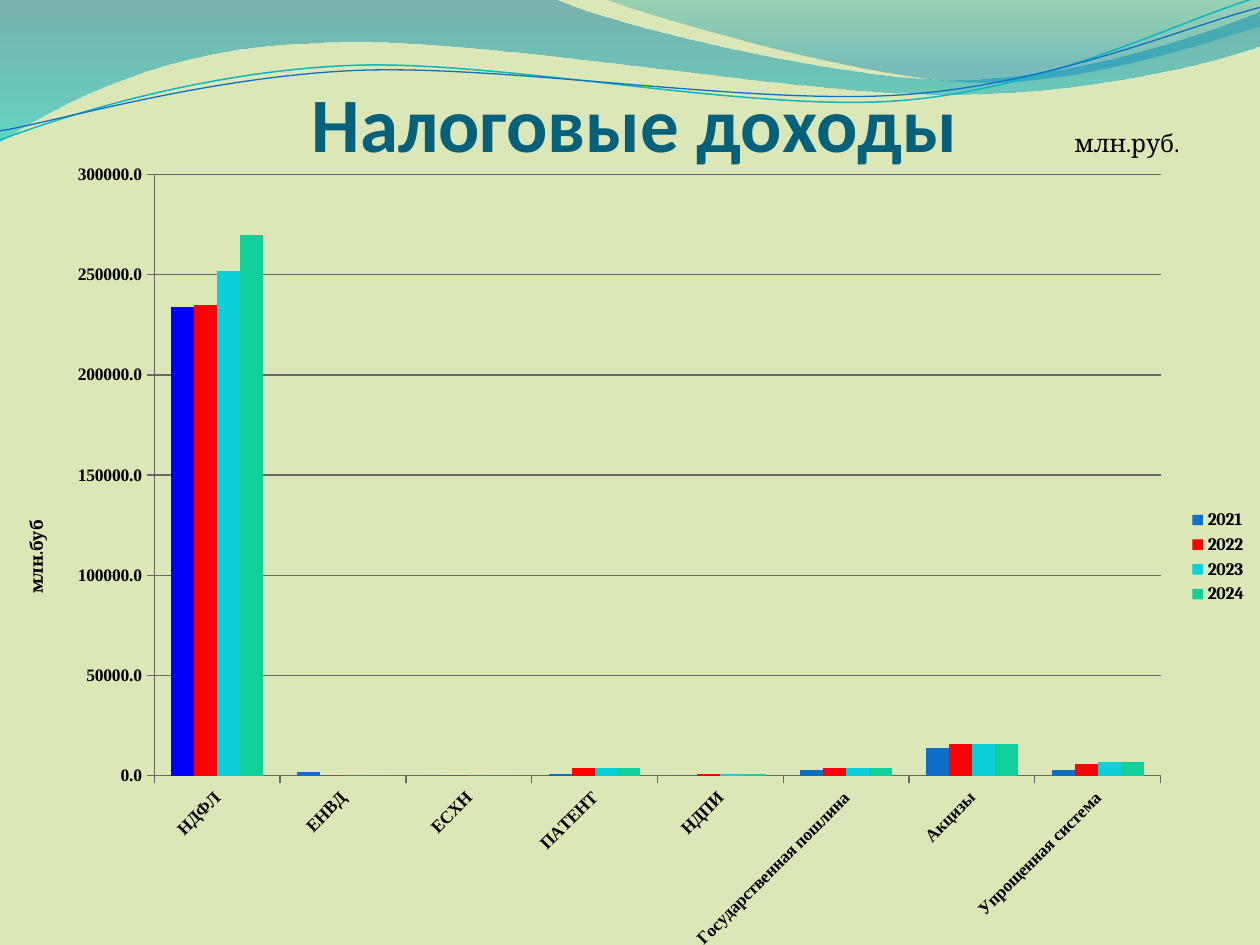
import math

import pptx
import pptx.chart.data
import pptx.dml.color
import pptx.enum.chart
import pptx.enum.text
import pptx.oxml
import pptx.oxml.ns
import pptx.util
from pptx.util import Cm

THEME = {
    "background": "DBE7B6", "title": "04617B", "text": "000000", "grid": "666666",
    "first_bar": "0000FF", "series": ["0F6FC6", "FF0000", "0BD0D9", "10CF9B"],
    "title_size": 44, "unit_size": 14, "chart_size": 10,
    "title_font": "Calibri", "body_font": "Cambria", "axis_font": "Times New Roman",
}

CATEGORIES = ["НДФЛ", "ЕНВД", "ЕСХН", "ПАТЕНТ", "НДПИ",
              "Государственная пошлина", "Акцизы", "Упрощенная система"]
SERIES = {
    "2021": [234000, 2000, 0, 1000, 0, 3000, 14000, 3000],
    "2022": [235000, 0, 0, 4000, 1000, 4000, 16000, 6000],
    "2023": [252000, 0, 0, 4000, 1000, 4000, 16000, 7000],
    "2024": [270000, 0, 0, 4000, 1000, 4000, 16000, 7000],
}

# Outlines in centimetres: two numbers make a line, six a Bezier curve.
# Gradient stops are (position, colour, opacity in percent).
WAVES = [
    {"outline": [(0, 0), (11.18, -0.03), (12.09, 0.43, 16.87, 1.6, 19.25, 1.6),
                 (21.67, 1.6, 24.33, 0.66, 25.4, 0.23), (25.43, 0.91),
                 (24.97, 1.12, 22.1, 1.93, 18.95, 1.9),
                 (15.8, 1.9, 9.7, 0.71, 6.53, 0.86),
                 (3.28, 0.91, 1.17, 2.11, -0.03, 2.87), (0, 0)],
     "stops": [(0, "0074A1", 45), (1, "00C6CF", 55)]},
    {"outline": [(12.17, -0.03), (12.93, 0.28, 17.32, 1.57, 19.53, 1.65),
                 (21.74, 1.75, 24.41, 0.81, 25.4, 0.53), (25.4, 0), (12.17, -0.03)],
     "stops": [(0, "00A1A9", 30), (0.8, "008BBF", 45)]},
    {"outline": [(0, 2.82), (1.22, 2.36, 4.01, 1.45, 7.04, 1.32),
                 (10.03, 1.19, 15.06, 2.26, 18.11, 2.03),
                 (21.16, 1.8, 23.83, 0.38, 25.35, -0.05)],
     "line": ("0AB8BF", 0.85), "center": (12.67, 1.46)},
    {"outline": [(0, 2.64), (1.19, 2.44, 4.17, 1.55, 7.19, 1.42),
                 (10.24, 1.3, 15.16, 2.13, 18.21, 1.91),
                 (21.23, 1.7, 23.9, 0.53, 25.4, 0.15)],
     "line": ("0F6FC6", 0.75), "center": (12.69, 1.5)},
]
LINE_TILT = -2.7

ANCHOR = pptx.enum.text.MSO_ANCHOR
TEXTS = [
    {"text": "Налоговые доходы", "box": (1.27, 1.96, 23.06, 1.42),
     "frame": {"vertical_anchor": ANCHOR.BOTTOM, "margin_left": 0, "margin_right": 0,
               "margin_bottom": 0},
     "font": {"name": THEME["title_font"], "size": pptx.util.Pt(THEME["title_size"]),
              "bold": True},
     "color": THEME["title"]},
    {"text": "млн.руб.", "box": (21.03, 2.59, 3.38, 0.58),
     "frame": {"vertical_anchor": ANCHOR.MIDDLE},
     "font": {"name": THEME["body_font"], "size": pptx.util.Pt(THEME["unit_size"])},
     "color": THEME["text"]},
]
CHART_BOX = (0, 3, 25.4, 16.46)
PLOT_BOX = (3.11, 0.52, 20.29, 12.12)
AXIS_TITLE_CORNER = (0.44, 7.42)


def rgb(code):
    return pptx.dml.color.RGBColor.from_string(code)


def set_values(target, values):
    for name, value in values.items():
        setattr(target, name, value)


def level(point, center):
    """Undo the tilt of a line, which the shape's own rotation puts back."""
    angle = math.radians(-LINE_TILT)
    x, y = point[0] - center[0], point[1] - center[1]
    return (center[0] + x * math.cos(angle) - y * math.sin(angle),
            center[1] + x * math.sin(angle) + y * math.cos(angle))


def segment_points(wave):
    """Return each segment as a list of points, the last being its end."""
    segments = []
    for numbers in wave["outline"]:
        points = list(zip(numbers[::2], numbers[1::2]))
        if "center" in wave:
            points = [level(point, wave["center"]) for point in points]
        segments.append([(Cm(x), Cm(y)) for x, y in points])
    return segments


def draw_outline(slide, wave):
    """Build a freeform through the segment ends, then bend its curved segments."""
    segments = segment_points(wave)
    ends = [points[-1] for points in segments]
    builder = slide.shapes.build_freeform(*ends[0])
    builder.add_line_segments(ends[1:], close="stops" in wave)
    shape = builder.convert_to_shape()
    lines = shape._element.findall(".//" + pptx.oxml.ns.qn("a:lnTo"))
    for line, points in zip(lines, segments[1:]):
        if len(points) == 3:
            corners = "".join(f'<a:pt x="{x - shape.left}" y="{y - shape.top}"/>'
                              for x, y in points)
            line.getparent().replace(line, pptx.oxml.parse_xml(
                f'<a:cubicBezTo {pptx.oxml.ns.nsdecls("a")}>{corners}</a:cubicBezTo>'))
    return shape


def add_wave(slide, wave):
    shape = draw_outline(slide, wave)
    shape.shadow.inherit = False
    if "line" in wave:
        color, width = wave["line"]
        shape.rotation = LINE_TILT
        shape.fill.background()
        shape.line.color.rgb = rgb(color)
        shape.line.width = pptx.util.Pt(width)
        return
    shape.line.fill.background()
    shape.fill.gradient()
    shape.fill.gradient_angle = 270
    for stop, (position, color, _) in zip(shape.fill.gradient_stops, wave["stops"]):
        stop.position = position
        stop.color.rgb = rgb(color)
    colors = shape._element.spPr.findall(".//" + pptx.oxml.ns.qn("a:srgbClr"))
    for element, (_, _, opacity) in zip(colors, wave["stops"]):
        element.append(pptx.oxml.parse_xml(
            f'<a:alpha {pptx.oxml.ns.nsdecls("a")} val="{opacity * 1000}"/>'))


def add_text(slide, item):
    frame = slide.shapes.add_textbox(*map(Cm, item["box"])).text_frame
    set_values(frame, {"word_wrap": True, **item["frame"]})
    paragraph = frame.paragraphs[0]
    paragraph.alignment = pptx.enum.text.PP_ALIGN.CENTER
    run = paragraph.add_run()
    run.text = item["text"]
    set_values(run.font, item["font"])
    run.font.color.rgb = rgb(item["color"])


def set_layout(element, index, box):
    """Place a chart part by centimetres from the chart's corner."""
    for old in element.findall(pptx.oxml.ns.qn("c:layout")):
        element.remove(old)
    target = '<c:layoutTarget val="inner"/>' if len(box) == 4 else ""
    sizes = "".join(f'<c:{name} val="{length / full}"/>'
                    for name, length, full in zip("xywh", box, CHART_BOX[2:] * 2))
    element.insert(index, pptx.oxml.parse_xml(
        f'<c:layout {pptx.oxml.ns.nsdecls("c")}><c:manualLayout>{target}'
        f'<c:xMode val="edge"/><c:yMode val="edge"/>{sizes}</c:manualLayout></c:layout>'))


def add_tax_chart(slide):
    data = pptx.chart.data.CategoryChartData(number_format="0.0")
    data.categories = CATEGORIES
    for name, values in SERIES.items():
        data.add_series(name, values)
    chart = slide.shapes.add_chart(
        pptx.enum.chart.XL_CHART_TYPE.COLUMN_CLUSTERED, *map(Cm, CHART_BOX), data).chart
    body_font = {"name": THEME["body_font"], "size": pptx.util.Pt(THEME["chart_size"])}
    axis_font = {**body_font, "name": THEME["axis_font"], "bold": True}
    set_values(chart, {"has_title": False, "has_legend": True})
    set_values(chart.font, body_font)
    chart.font.color.rgb = rgb(THEME["text"])
    set_values(chart.legend, {"position": pptx.enum.chart.XL_LEGEND_POSITION.RIGHT,
                              "include_in_layout": False})
    set_values(chart.legend.font, {**body_font, "bold": True})

    plot = chart.plots[0]
    set_values(plot, {"gap_width": 150, "overlap": 0, "vary_by_categories": False})
    fills = [series.format.fill for series in plot.series]
    fills.append(plot.series[0].points[0].format.fill)
    for fill, color in zip(fills, [*THEME["series"], THEME["first_bar"]]):
        fill.solid()
        fill.fore_color.rgb = rgb(color)

    category_axis, value_axis = chart.category_axis, chart.value_axis
    set_values(value_axis, {"minimum_scale": 0, "maximum_scale": 300000,
                            "major_unit": 50000, "has_major_gridlines": True})
    set_values(value_axis.tick_labels, {"number_format": "0.0",
                                        "number_format_is_linked": False})
    for axis in (category_axis, value_axis):
        axis.major_tick_mark = pptx.enum.chart.XL_TICK_MARK.OUTSIDE
        set_values(axis.tick_labels.font, axis_font)
    for lines in (category_axis, value_axis, value_axis.major_gridlines):
        lines.format.line.color.rgb = rgb(THEME["grid"])
        lines.format.line.width = pptx.util.Pt(0.75)
    label_body = category_axis._element.txPr.bodyPr
    label_body.set("rot", "-2700000")
    label_body.set("vert", "horz")

    title = value_axis.axis_title
    title.text_frame.text = "млн.буб"
    set_values(title.text_frame.paragraphs[0].runs[0].font, {**body_font, "bold": True})
    set_layout(title._element, 1, AXIS_TITLE_CORNER)
    set_layout(chart._chartSpace.chart.plotArea, 0, PLOT_BOX)


def main():
    presentation = pptx.Presentation()
    set_values(presentation, {"slide_width": Cm(25.4), "slide_height": Cm(19.05)})
    slide = presentation.slides.add_slide(presentation.slide_layouts[6])
    slide.background.fill.solid()
    slide.background.fill.fore_color.rgb = rgb(THEME["background"])
    for wave in WAVES:
        add_wave(slide, wave)
    for item in TEXTS:
        add_text(slide, item)
    add_tax_chart(slide)
    presentation.save("out.pptx")


if __name__ == "__main__":
    main()
